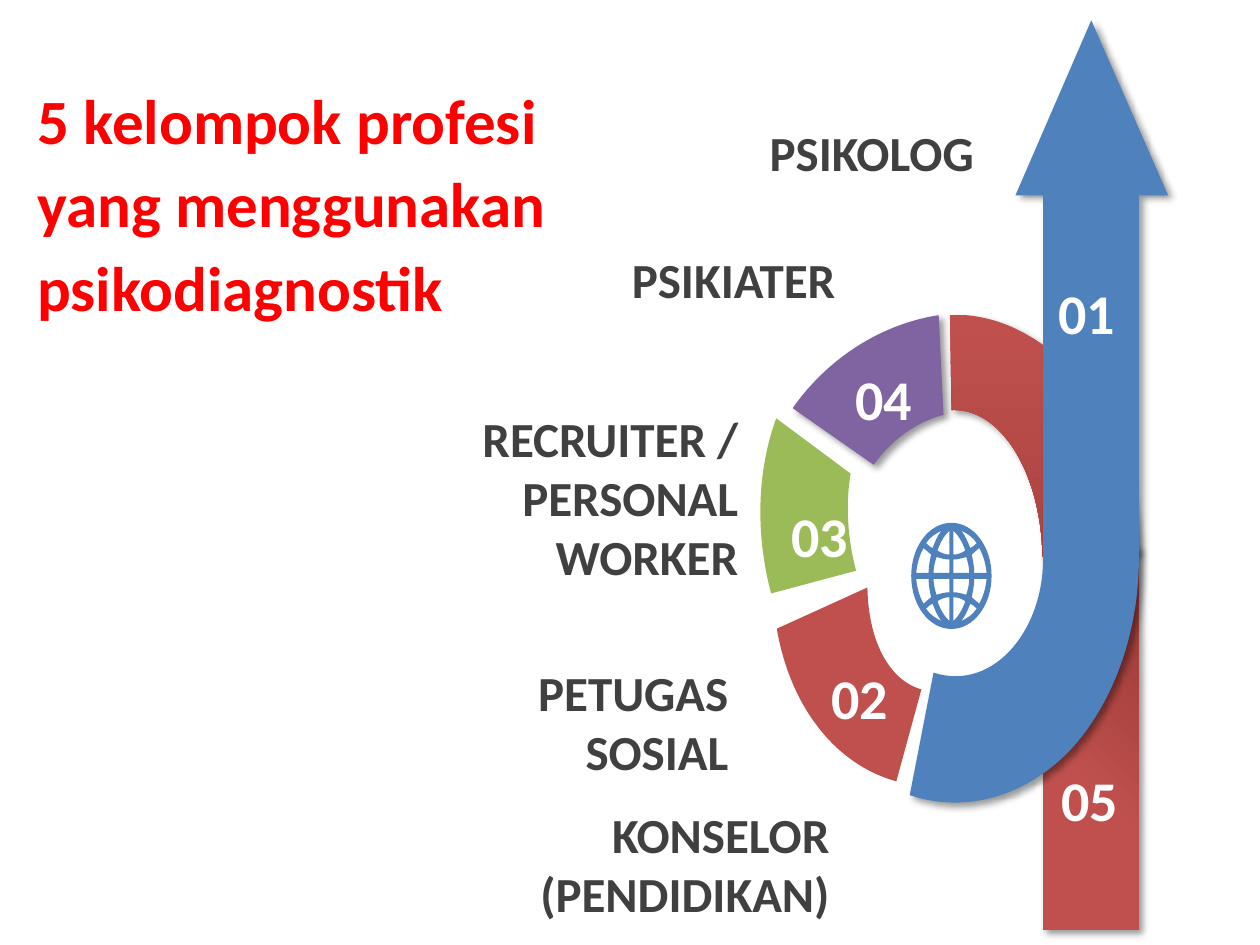
from lxml.etree import Element, SubElement
from pptx import Presentation
from pptx.dml.color import RGBColor
from pptx.enum.shapes import MSO_SHAPE
from pptx.enum.text import MSO_ANCHOR, MSO_AUTO_SIZE, PP_ALIGN
from pptx.oxml.ns import qn
from pptx.util import Cm, Pt

BLUE, RED, DARK_RED = "4F81BD", "C0504D", "953735"
GREEN, PURPLE, GREY, WHITE = "9BBB59", "8064A2", "404040", "FFFFFF"

LABEL = {"size": Pt(28), "name": "Calibri", "bold": True}
NUMBER = {"size": Pt(32), "name": "Calibri", "bold": True}
HEADING = {"size": Pt(36), "name": "Calibri", "bold": True}

ARROW = [
    (22, 0.41), (23.55, 3.94), (22.96, 3.94), (22.96, 11.25),
    ((22.96, 12.78), (22.43, 14.22), (21.54, 15.16)),
    ((20.87, 15.83), (20.07, 16.18), (19.25, 16.18)),
    ((18.95, 16.18), (18.64, 16.13), (18.34, 16.03)),
    (18.82, 13.56),
    ((19.35, 13.74), (19.91, 13.59), (20.35, 13.13)),
    ((20.78, 12.67), (21.03, 11.99), (21.03, 11.25)),
    (21.03, 3.94), (20.47, 3.94),
]

GLOBE_CENTRE = (19.18, 11.61)
GLOBE_RIM = [
    (0.81, 0), ((0.81, 0.59), (0.45, 1.07), (0, 1.07)),
    ((-0.45, 1.07), (-0.81, 0.59), (-0.81, 0)),
    ((-0.81, -0.59), (-0.45, -1.07), (0, -1.07)),
    ((0.45, -1.07), (0.81, -0.59), (0.81, 0)),
]
GLOBE_CELLS = [
    [(0.38, 0.56), ((0.33, 0.69), (0.28, 0.81), (0.2, 0.91)),
     ((0.3, 0.86), (0.43, 0.79), (0.51, 0.66)),
     ((0.46, 0.61), (0.43, 0.58), (0.38, 0.56))],
    [(0.04, 0.43), (0.04, 0.91), ((0.15, 0.81), (0.23, 0.66), (0.28, 0.51)),
     ((0.2, 0.46), (0.13, 0.43), (0.04, 0.43))],
    [(0.46, 0.06), ((0.46, 0.2), (0.43, 0.33), (0.41, 0.43)),
     ((0.46, 0.48), (0.51, 0.51), (0.56, 0.56)),
     ((0.64, 0.43), (0.69, 0.25), (0.71, 0.06))],
    [(0.04, 0.06), (0.04, 0.33), ((0.13, 0.33), (0.23, 0.36), (0.3, 0.38)),
     ((0.33, 0.28), (0.36, 0.18), (0.36, 0.06))],
]

LABELS = [
    ("PSIKOLOG", 14.52, 2.34, 5.36, 1.45),
    ("PSIKIATER", 11.93, 4.9, 5.16, 1.45),
    ("RECRUITER / PERSONAL WORKER", 8.12, 8.12, 7.01, 3.84),
    ("PETUGAS SOSIAL", 8.71, 13.23, 6.22, 2.64),
    ("KONSELOR (PENDIDIKAN)", 10.24, 16.1, 6.73, 2.64),
]
NUMBERS = [("01", 20.86, 5.49), ("02", 16.28, 13.26), ("03", 15.47, 9.98),
           ("04", 16.76, 7.23), ("05", 20.91, 15.3)]


def rgb(value):
    """Turn a hex string into a colour."""
    return RGBColor.from_string(value)


def add_shadow(sp):
    """Give a shape a soft shadow to the lower right."""
    effects = sp._element.spPr.find(qn("a:effectLst"))
    shadow = SubElement(effects, qn("a:outerShdw"), blurRad=str(Pt(4)), dist=str(Pt(3)),
                        dir="2700000", algn="tl", rotWithShape="0")
    colour = SubElement(shadow, qn("a:srgbClr"), val="000000")
    SubElement(colour, qn("a:alpha"), val="40000")


def paint(sp, colour, shadow=False):
    """Fill a shape plainly, without an outline."""
    sp.fill.solid()
    sp.fill.fore_color.rgb = rgb(colour)
    sp.line.fill.background()
    sp.shadow.inherit = False
    if shadow:
        add_shadow(sp)


def paint_gradient(sp, angle, start=0):
    """Fade a shape from red to dark red."""
    paint(sp, RED, shadow=True)
    sp.fill.gradient()
    sp.fill.gradient_angle = angle
    for stop, colour, place in zip(sp.fill.gradient_stops, (RED, DARK_RED), (start, 1)):
        stop.color.rgb = rgb(colour)
        stop.position = place


def add_block_arc(s, box, rotation, adjustments):
    """Add one segment of the ring."""
    sp = s.shapes.add_shape(MSO_SHAPE.BLOCK_ARC, *map(Cm, box))
    sp.rotation = rotation
    for i, value in enumerate(adjustments):
        sp.adjustments[i] = value
    return sp


def is_curve(part):
    """Tell a cubic curve from a plain point."""
    return isinstance(part[0], tuple)


def move(part, centre, mirror=(1, 1)):
    """Mirror a point or curve and move it to a centre."""
    if is_curve(part):
        return tuple(move(point, centre, mirror) for point in part)
    return tuple(c + m * v for c, m, v in zip(centre, mirror, part))


def add_freeform(s, contours):
    """Add one outline of closed contours, made of points and cubic curves."""
    builder = None
    for contour in contours:
        ends = [part[-1] if is_curve(part) else part for part in contour]
        points = [(Cm(x), Cm(y)) for x, y in ends]
        if builder is None:
            builder = s.shapes.build_freeform(*points[0])
        else:
            builder.move_to(*points[0])
        builder.add_line_segments(points[1:], close=True)
    sp = builder.convert_to_shape()
    parts = [part for contour in contours for part in contour[1:]]
    for line, part in zip(list(sp._element.iter(qn("a:lnTo"))), parts):
        if is_curve(part):
            curve = Element(qn("a:cubicBezTo"))
            for x, y in part:
                SubElement(curve, qn("a:pt"), x=str(Cm(x) - sp.left), y=str(Cm(y) - sp.top))
            line.getparent().replace(line, curve)
    return sp


def add_globe(s):
    """Add the globe, with its cells mirrored into four quarters."""
    contours = [[move(part, GLOBE_CENTRE) for part in GLOBE_RIM]]
    for cell in GLOBE_CELLS:
        for mirror in ((1, 1), (-1, 1), (1, -1), (-1, -1)):
            contours.append([move(part, GLOBE_CENTRE, mirror) for part in cell])
    paint(add_freeform(s, contours), BLUE)


def write(tf, text, style, colour, align):
    """Write one formatted paragraph."""
    tf.word_wrap = True
    p = tf.paragraphs[0]
    p.alignment = align
    r = p.add_run()
    r.text = text
    for key, value in style.items():
        setattr(r.font, key, value)
    r.font.color.rgb = rgb(colour)
    return p


def add_text(s, text, box, style, colour, align):
    """Add a text box that fits its text."""
    tf = s.shapes.add_textbox(*map(Cm, box)).text_frame
    write(tf, text, style, colour, align)
    tf.auto_size = MSO_AUTO_SIZE.SHAPE_TO_FIT_TEXT


def set_title(s, text):
    """Place and format the title."""
    sp = s.shapes.title
    sp.left, sp.top, sp.width, sp.height = map(Cm, (0.5, 0.72, 12.19, 6.58))
    tf = sp.text_frame
    tf.auto_size = MSO_AUTO_SIZE.NONE
    tf.vertical_anchor = MSO_ANCHOR.MIDDLE
    p = write(tf, text, HEADING, "FF0000", PP_ALIGN.LEFT)
    p.line_spacing = 1.1
    p.space_before = Pt(7.2)


def add_ring(s):
    """Add the ring, its red stem and the blue arrow."""
    arc = add_block_arc(s, (14.3, 7.59, 9.88, 7.39), 90, (107.35, 160.74, 0.26))
    paint_gradient(arc, 0)
    stem = s.shapes.add_shape(MSO_SHAPE.RECTANGLE, *map(Cm, (21.03, 11.02, 1.93, 7.72)))
    paint_gradient(stem, 45, 0.38)
    paint(add_freeform(s, [ARROW]), BLUE, shadow=True)
    for box, rotation, adjustments, colour, shadow in (
        ((14.43, 7.29, 9.88, 7.39), 285, (108.15, 138.31, 0.26), RED, False),
        ((15.42, 6.07, 7.39, 9.88), 345.4, (107.78, 138.73, 0.24), GREEN, False),
        ((15.29, 6.17, 7.67, 8.51), 36, (107.35, 138.7, 0.26), PURPLE, True),
    ):
        paint(add_block_arc(s, box, rotation, adjustments), colour, shadow)


def main():
    """Build the slide and save it."""
    prs = Presentation()
    prs.slide_width, prs.slide_height = Cm(25.4), Cm(19.05)
    s = prs.slides.add_slide(prs.slide_layouts[5])
    set_title(s, "5 kelompok profesi yang menggunakan psikodiagnostik")
    add_ring(s)
    for text, *box in LABELS:
        add_text(s, text, box, LABEL, GREY, PP_ALIGN.RIGHT)
    for text, x, y in NUMBERS:
        add_text(s, text, (x, y, 2.11, 1.63), NUMBER, WHITE, PP_ALIGN.CENTER)
    add_globe(s)
    prs.save("out.pptx")


if __name__ == "__main__":
    main()
